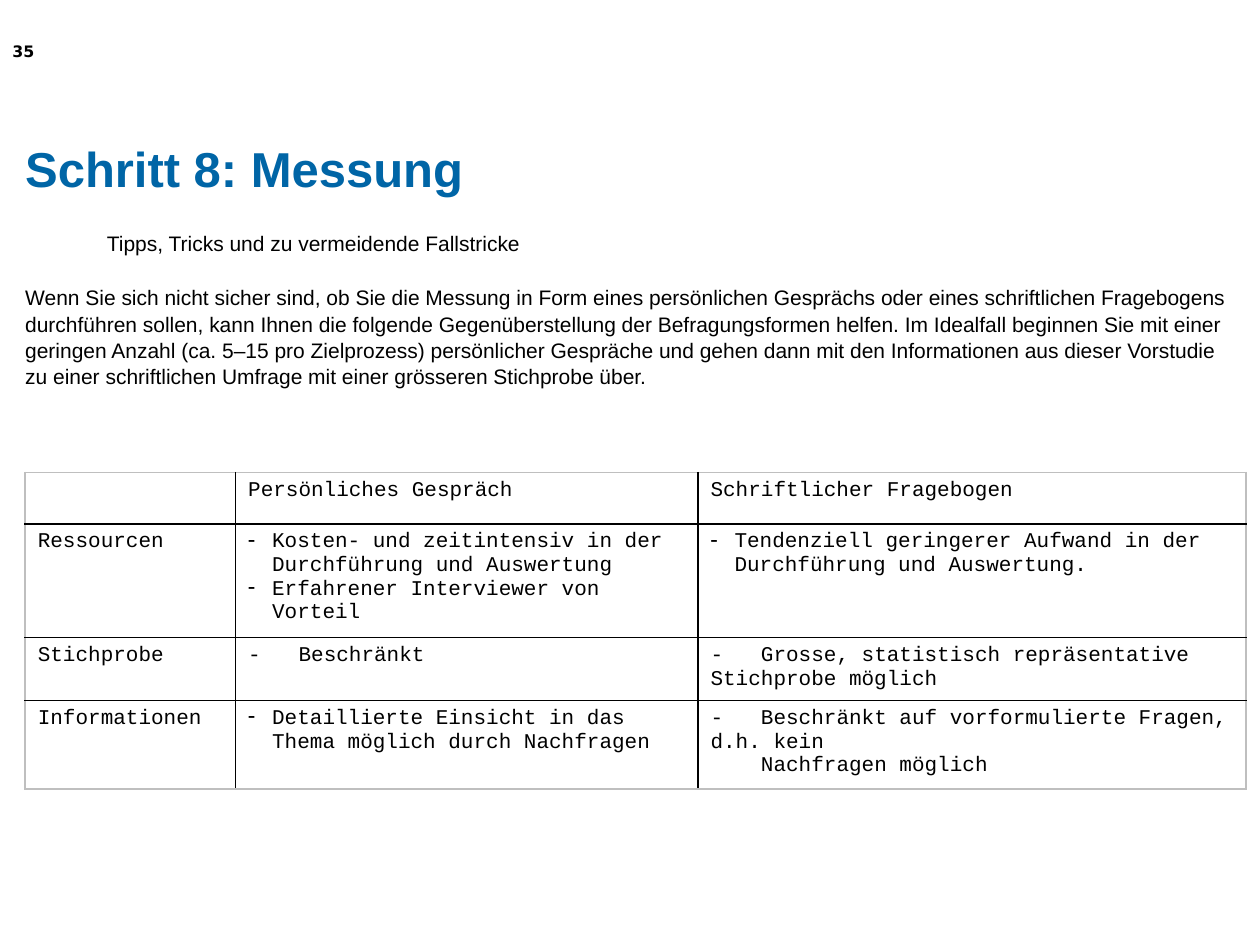
from dataclasses import dataclass

from pptx import Presentation
from pptx.dml.color import RGBColor
from pptx.enum import text as t
from pptx.oxml.ns import qn
from pptx.util import Inches, Pt
from lxml import etree

BLACK, BLUE, GREY, WHITE = "000000", "0065A6", "BFBFBF", "FFFFFF"
INDENT = Inches(0.19)
TAB_STOP = Inches(0.4)


@dataclass
class Label:
    text: str
    left: float
    top: float
    width: float
    height: float
    font: str = "Arial"
    size: float = 12
    color: str = BLACK
    bold: bool = False
    inset: bool = False
    wrap: bool = True
    middle: bool = False
    spacing: float = 1.0


@dataclass
class Entry:
    """Table cell content; bulleted paragraphs hang, others may use a tab."""
    text: str
    bulleted: bool = False


LABELS = [
    Label("Schritt 8: Messung", 0.2, 1.05, 9.61, 0.57,
          size=28, color=BLUE, bold=True, middle=True),
    Label("Wenn Sie sich nicht sicher sind, ob Sie die Messung in Form eines "
          "persönlichen Gesprächs oder eines schriftlichen Fragebogens "
          "durchführen sollen, kann Ihnen die folgende Gegenüberstellung der "
          "Befragungsformen helfen. Im Idealfall beginnen Sie mit einer "
          "geringen Anzahl (ca. 5–15 pro Zielprozess) persönlicher Gespräche "
          "und gehen dann mit den Informationen aus dieser Vorstudie zu einer "
          "schriftlichen Umfrage mit einer grösseren Stichprobe über.",
          0.2, 2.25, 9.61, 0.87, spacing=1.05),
    Label("35", 0, 0.28, 0.79, 0.47, font="DejaVu Sans", size=9, bold=True,
          inset=True),
    Label("Tipps, Tricks und zu vermeidende Fallstricke",
          0.75, 1.78, 3.51, 0.3, inset=True, wrap=False),
]

COLUMN_WIDTHS = [1.67, 3.67, 4.35]
ROW_HEIGHTS = [0.41, 0.9, 0.5, 0.7]
ROWS = [
    [Entry(""), Entry("Persönliches Gespräch"),
     Entry("Schriftlicher Fragebogen")],
    [Entry("Ressourcen"),
     Entry("Kosten- und zeitintensiv in der Durchführung und Auswertung\n"
           "Erfahrener Interviewer von Vorteil", True),
     Entry("Tendenziell geringerer Aufwand in der Durchführung und "
           "Auswertung.", True)],
    [Entry("Stichprobe"), Entry("-\tBeschränkt"),
     Entry("-\tGrosse, statistisch repräsentative Stichprobe möglich")],
    [Entry("Informationen"),
     Entry("Detaillierte Einsicht in das Thema möglich durch Nachfragen",
           True),
     Entry("-\tBeschränkt auf vorformulierte Fragen, d.h. kein\v"
           "\tNachfragen möglich")],
]


def rgb(color: str) -> RGBColor:
    return RGBColor.from_string(color)


def style_font(font, name: str, size: float, color: str,
               bold: bool = False) -> None:
    font.name = name
    font.size = Pt(size)
    font.bold = bold
    font.color.rgb = rgb(color)


def add_label(slide, label: Label) -> None:
    box = slide.shapes.add_textbox(Inches(label.left), Inches(label.top),
                                   Inches(label.width), Inches(label.height))
    frame = box.text_frame
    frame.word_wrap = label.wrap
    if label.middle:
        frame.vertical_anchor = t.MSO_ANCHOR.MIDDLE
    if not label.inset:
        frame.margin_left = frame.margin_right = 0
        frame.margin_top = frame.margin_bottom = 0
    frame.text = label.text
    paragraph = frame.paragraphs[0]
    paragraph.line_spacing = label.spacing
    style_font(paragraph.runs[0].font, label.font, label.size, label.color,
               label.bold)


def add_bullet(paragraph) -> None:
    properties = paragraph._p.get_or_add_pPr()
    properties.set("marL", str(INDENT))
    properties.set("indent", str(-INDENT))
    etree.SubElement(properties, qn("a:buFontTx"))
    etree.SubElement(properties, qn("a:buChar"), char="-")


def add_tab_stop(paragraph) -> None:
    tabs = etree.SubElement(paragraph._p.get_or_add_pPr(), qn("a:tabLst"))
    etree.SubElement(tabs, qn("a:tab"), pos=str(TAB_STOP), algn="l")


def set_border(cell, side: str, color: str) -> None:
    line = etree.SubElement(cell._tc.get_or_add_tcPr(), qn(f"a:{side}"),
                            w=str(Pt(1)))
    fill = etree.SubElement(line, qn("a:solidFill"))
    etree.SubElement(fill, qn("a:srgbClr"), val=color)


def fill_cell(cell, entry: Entry) -> None:
    cell.fill.solid()
    cell.fill.fore_color.rgb = rgb(WHITE)
    cell.text_frame.text = entry.text
    for paragraph in cell.text_frame.paragraphs:
        if entry.bulleted:
            add_bullet(paragraph)
        elif "\t" in entry.text:
            add_tab_stop(paragraph)
        style_font(paragraph.font, "Courier New", 12, BLACK)
        for run in paragraph.runs:
            style_font(run.font, "Courier New", 12, BLACK)


def add_comparison(slide) -> None:
    last_row, last_column = len(ROWS) - 1, len(COLUMN_WIDTHS) - 1
    table = slide.shapes.add_table(
        len(ROWS), len(COLUMN_WIDTHS), Inches(0.2), Inches(3.75),
        Inches(sum(COLUMN_WIDTHS)), Inches(sum(ROW_HEIGHTS))).table
    table.first_row = table.horz_banding = False
    for column, width in zip(table.columns, COLUMN_WIDTHS):
        column.width = Inches(width)
    for row, height in zip(table.rows, ROW_HEIGHTS):
        row.height = Inches(height)
    for i, entries in enumerate(ROWS):
        for j, entry in enumerate(entries):
            cell = table.cell(i, j)
            outer_sides = {"lnL": j == 0, "lnR": j == last_column,
                           "lnT": i == 0, "lnB": i == last_row}
            for side, is_outer in outer_sides.items():
                set_border(cell, side, GREY if is_outer else BLACK)
            fill_cell(cell, entry)


def main() -> None:
    presentation = Presentation()
    presentation.slide_width = Inches(10)
    presentation.slide_height = Inches(7.5)
    slide = presentation.slides.add_slide(presentation.slide_layouts[6])
    for label in LABELS:
        add_label(slide, label)
    add_comparison(slide)
    presentation.save("out.pptx")


if __name__ == "__main__":
    main()
